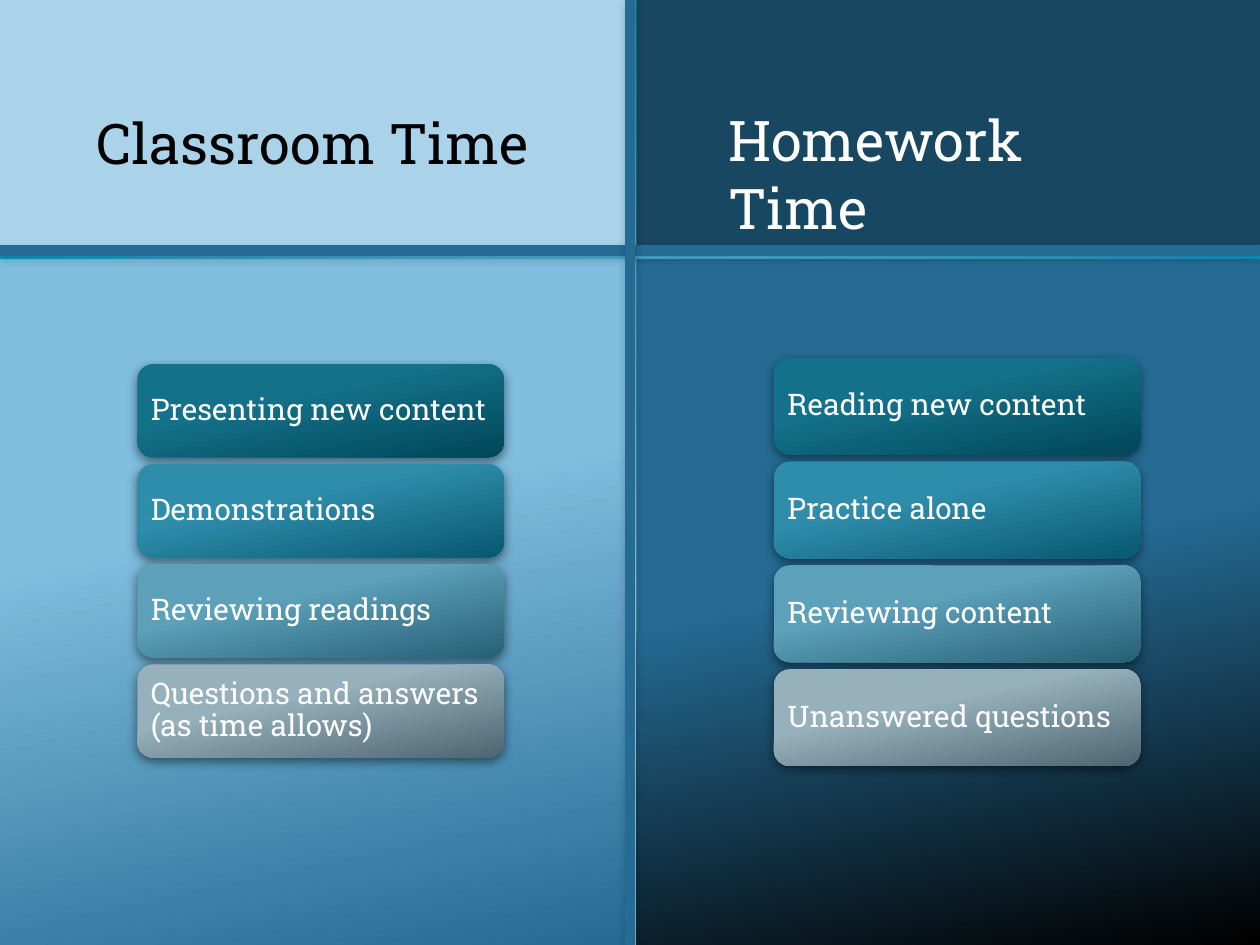
from lxml import etree
from pptx import Presentation
from pptx.dml.color import RGBColor
from pptx.enum.shapes import MSO_CONNECTOR, MSO_SHAPE
from pptx.enum.text import MSO_ANCHOR, MSO_AUTO_SIZE, PP_ALIGN
from pptx.oxml.ns import qn
from pptx.util import Cm, Pt

RECT, ROUND = MSO_SHAPE.RECTANGLE, MSO_SHAPE.ROUNDED_RECTANGLE
LINE = MSO_CONNECTOR.STRAIGHT
FIT = MSO_AUTO_SIZE.SHAPE_TO_FIT_TEXT
MIDDLE, LEFT = MSO_ANCHOR.MIDDLE, PP_ALIGN.LEFT

FONT = "Roboto Slab"
WIDE, HIGH = 25.4, 19.05
HEAD, BODY = 5.05, 5.23  # bottom of the headers, top of the bodies
MID = 12.7
GAP = 0.14
TILT = 282  # 78 degrees clockwise
SHADES = [("137189", "004658"), ("2E8DAB", "085871"),
          ("5CA0B9", "276075"), ("96B0BC", "4D6671")]

# panel box, header colour, body gradient, title, title place, text colour,
# list box, list items
SIDES = [
    dict(box=(0, 0, MID, HIGH), head="AAD3EA",
         body=("80BDDF", "256B94", 0.38),
         title="Classroom Time", spot=(1.7, 2.06), ink="000000",
         rows=(2.77, 7.34, 7.39, 7.93),
         items=["Presenting new content", "Demonstrations",
                "Reviewing readings",
                "Questions and answers (as time allows)"]),
    dict(box=(12.83, 0, WIDE - 12.83, HIGH), head="184762",
         body=("256B94", "000000", 0.45),
         title="Homework Time", spot=(14.43, 2.01), ink="FFFFFF",
         rows=(15.6, 7.21, 7.39, 8.23),
         items=["Reading new content", "Practice alone",
                "Reviewing content", "Unanswered questions"]),
]


def color(code):
    return RGBColor.from_string(code)


def blend(fill, first, last, start):
    fill.gradient()
    for stop, code, pos in zip(fill.gradient_stops, (first, last), (start, 1)):
        stop.color.rgb = color(code)
        stop.position = pos


def shade(props, alpha=None, blur=0, dist=0):
    """Set the effect list, with a downward shadow if alpha is given."""
    list_ = props.find(qn("a:effectLst"))
    if list_ is None:
        list_ = etree.SubElement(props, qn("a:effectLst"))
    if alpha:
        drop = etree.SubElement(list_, qn("a:outerShdw"), blurRad=str(Pt(blur)),
                                dist=str(Pt(dist)), dir="5400000", rotWithShape="0")
        tone = etree.SubElement(drop, qn("a:srgbClr"), val="000000")
        etree.SubElement(tone, qn("a:alpha"), val=str(alpha * 1000))


def block(slide, kind, x, y, w, h):
    shape = slide.shapes.add_shape(kind, Cm(x), Cm(y), Cm(w), Cm(h))
    shape.shadow.inherit = False
    shape.line.fill.background()
    return shape


def write(para, text, size, ink):
    run = para.add_run()
    run.text = text
    run.font.name = FONT
    run.font.size = Pt(size)
    run.font.color.rgb = color(ink)


def backdrop(slide):
    fill = slide.background.fill
    blend(fill, "AAD3EA", "0A9BCA", 0)
    # Turn the linear gradient into a circular one
    lin = next(slide.background._cSld.iter(qn("a:lin")))
    ring = etree.Element(qn("a:path"), {"path": "circle"})
    etree.SubElement(ring, qn("a:fillToRect"),
                     l="50000", t="50000", r="50000", b="0")
    lin.getparent().replace(lin, ring)


def panel(slide, box, head, body):
    x, y, w, h = box
    top = block(slide, RECT, x, y, w, HEAD)
    top.fill.solid()
    top.fill.fore_color.rgb = color(head)
    base = block(slide, RECT, x, y + BODY, w, h - BODY)
    blend(base.fill, *body)
    base.fill.gradient_angle = TILT


def rule(slide, x1, y1, x2, y2):
    line = slide.shapes.add_connector(LINE, Cm(x1), Cm(y1), Cm(x2), Cm(y2))
    line.line.color.rgb = color("256B94")
    line.line.width = Pt(6)
    shade(line._element.spPr, 20, 5, 1)


def heading(slide, x, y, text, ink):
    box = slide.shapes.add_textbox(Cm(x), Cm(y), Cm(9.47), Cm(1.63))
    frame = box.text_frame
    frame.word_wrap = True
    frame.auto_size = FIT
    write(frame.paragraphs[0], text, 32, ink)


def stack(slide, box, items):
    x, y, w, h = box
    tall = (h - GAP * (len(items) - 1)) / len(items)
    for i, (text, (first, last)) in enumerate(zip(items, SHADES)):
        tile = block(slide, ROUND, x, y + i * (tall + GAP), w, tall)
        blend(tile.fill, first, last, 0.38)
        tile.fill.gradient_angle = TILT
        shade(tile._element.spPr, 50, 6, 2)
        frame = tile.text_frame
        frame.word_wrap = True
        frame.vertical_anchor = MIDDLE
        frame.margin_left = frame.margin_right = Cm(0.18)
        frame.margin_top = frame.margin_bottom = Cm(0.18)
        para = frame.paragraphs[0]
        para.alignment = LEFT
        para.line_spacing = 0.9
        para.space_after = Pt(6)
        write(para, text, 17, "FFFFFF")


def main():
    deck = Presentation()
    deck.slide_width, deck.slide_height = Cm(WIDE), Cm(HIGH)
    slide = deck.slides.add_slide(deck.slide_layouts[6])
    backdrop(slide)

    # Two halves, then the cross between them
    for side in SIDES:
        panel(slide, side["box"], side["head"], side["body"])
    rule(slide, 0, HEAD, WIDE, HEAD)
    rule(slide, MID, 0, MID, HIGH)

    # Titles and lists
    for side in SIDES:
        heading(slide, *side["spot"], side["title"], side["ink"])
        stack(slide, side["rows"], side["items"])
    deck.save("out.pptx")


if __name__ == "__main__":
    main()
